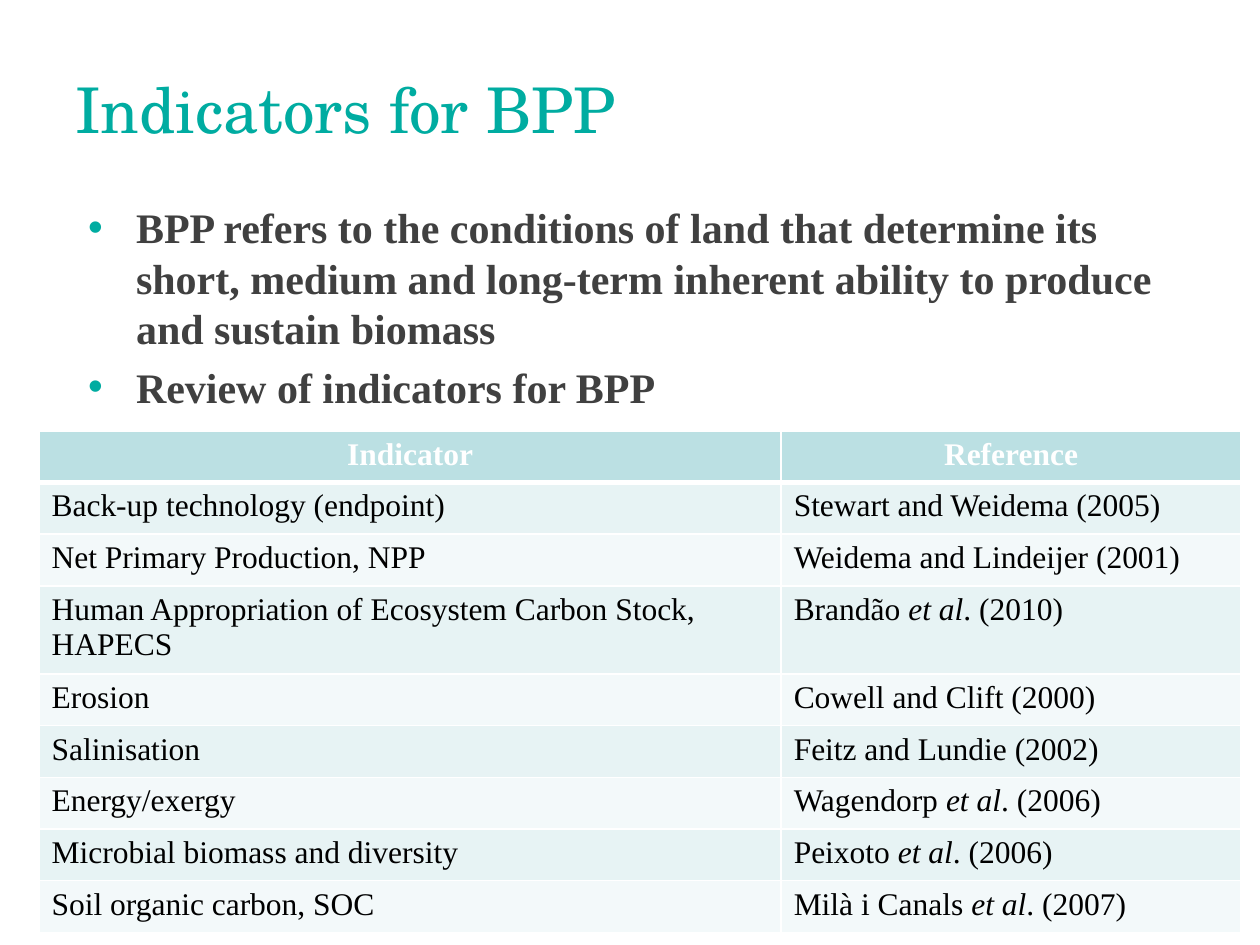
from dataclasses import dataclass

import pptx
import pptx.dml.color
import pptx.enum.shapes
import pptx.enum.text
import pptx.oxml.ns
import pptx.util
from lxml import etree
from pptx.util import Inches

rgb = pptx.dml.color.RGBColor.from_string


@dataclass(frozen=True)
class Theme:
    teal: str = "00ACA1"
    body: str = "404040"
    black: str = "000000"
    white: str = "FFFFFF"
    header: str = "BBE0E3"
    bands: tuple = ("E7F3F4", "F3F9FA")
    title_font: str = "TeX Gyre Schola"
    text_font: str = "Times New Roman"
    title_size: int = 36
    body_size: int = 24
    table_size: int = 18


theme = Theme()


def style(font, name, size, color, bold=False, italic=False):
    font.name, font.size, font.bold, font.italic = name, pptx.util.Pt(size), bold, italic
    font.color.rgb = rgb(color)


def add_element(parent, tag, **attributes):
    """Append a DrawingML child and return it."""
    return etree.SubElement(parent, pptx.oxml.ns.qn(f"a:{tag}"), **attributes)


deck = pptx.Presentation()
deck.slide_width, deck.slide_height = Inches(10), Inches(7.5)
slide = deck.slides.add_slide(deck.slide_layouts[6])

# Title
title = slide.shapes.add_textbox(Inches(0.5), Inches(0.3), Inches(9), Inches(1.12)).text_frame
title.word_wrap = True
title.vertical_anchor = pptx.enum.text.MSO_ANCHOR.MIDDLE
title.text = "Indicators for BPP"
style(title.paragraphs[0].runs[0].font, theme.title_font, theme.title_size, theme.teal)

# Definition panel
panel = slide.shapes.add_shape(pptx.enum.shapes.MSO_SHAPE.RECTANGLE,
                               Inches(0.5), Inches(1.4), Inches(9), Inches(4.68))
panel.shadow.inherit = False
panel.fill.solid()
panel.fill.fore_color.rgb = rgb(theme.white)
panel.line.fill.background()
points = panel.text_frame
points.word_wrap = True
points.vertical_anchor = pptx.enum.text.MSO_ANCHOR.TOP
points.margin_left = points.margin_top = Inches(0.2)
points.margin_right, points.margin_bottom = Inches(0.1), Inches(0.39)
points.text = (
    "BPP refers to the conditions of land that determine its short, medium and "
    "long-term inherent ability to produce and sustain biomass\n"
    "Review of indicators for BPP"
)
for index, point in enumerate(points.paragraphs):
    point.alignment = pptx.enum.text.PP_ALIGN.LEFT
    if index:
        point.space_before = pptx.util.Pt(0.2 * theme.body_size)
    properties = point._p.get_or_add_pPr()
    properties.set("marL", str(Inches(0.38)))
    properties.set("indent", str(-Inches(0.38)))
    add_element(add_element(properties, "buClr"), "srgbClr", val=theme.teal)
    add_element(properties, "buFont", typeface="Arial")
    add_element(properties, "buChar", char="•")
    style(point.runs[0].font, theme.text_font, theme.body_size, theme.body, bold=True)

# Indicator table; asterisks enclose italics
rows = [
    ("Indicator", "Reference"),
    ("Back-up technology (endpoint)", "Stewart and Weidema (2005)"),
    ("Net Primary Production, NPP", "Weidema and Lindeijer (2001)"),
    ("Human Appropriation of Ecosystem Carbon Stock, HAPECS", "Brandão *et al*. (2010)"),
    ("Erosion", "Cowell and Clift (2000)"),
    ("Salinisation", "Feitz and Lundie (2002)"),
    ("Energy/exergy", "Wagendorp *et al*. (2006)"),
    ("Microbial biomass and diversity", "Peixoto *et al*. (2006)"),
    ("Soil organic carbon, SOC", "Milà i Canals *et al*. (2007)"),
]
row_height = Inches(0.41)
indicators = slide.shapes.add_table(len(rows), 2, Inches(0.31), Inches(3.42),
                                    Inches(9.54), row_height * len(rows)).table
for column, width in zip(indicators.columns, (5.89, 3.65)):
    column.width = Inches(width)

for row_index, entries in enumerate(rows):
    is_header = row_index == 0
    indicators.rows[row_index].height = row_height
    for column_index, entry in enumerate(entries):
        cell = indicators.cell(row_index, column_index)
        paragraph = cell.text_frame.paragraphs[0]
        if is_header:
            paragraph.alignment = pptx.enum.text.PP_ALIGN.CENTER
        for part_index, part in enumerate(entry.split("*")):
            run = paragraph.add_run()
            run.text = part
            style(run.font, theme.text_font, theme.table_size,
                  theme.white if is_header else theme.black,
                  bold=is_header, italic=part_index % 2 == 1)
        for side in "LRTB":
            thick = (is_header and side == "B") or (row_index == 1 and side == "T")
            border = add_element(cell._tc.get_or_add_tcPr(), f"ln{side}",
                                 w=str(pptx.util.Pt(3 if thick else 1)))
            add_element(add_element(border, "solidFill"), "srgbClr", val=theme.white)
        cell.fill.solid()
        cell.fill.fore_color.rgb = rgb(theme.header if is_header
                                       else theme.bands[(row_index - 1) % 2])

deck.save("out.pptx")
